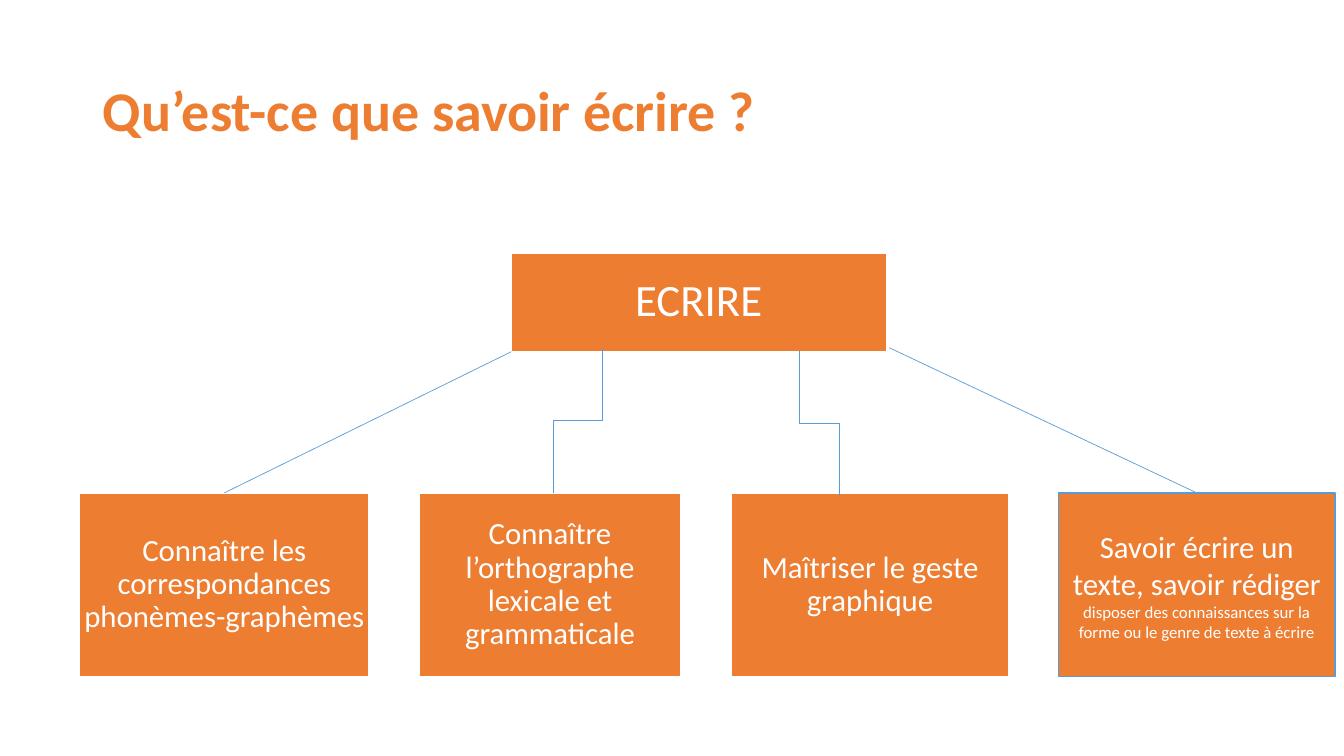
from pptx import Presentation
from pptx.dml.color import RGBColor
from pptx.enum.shapes import MSO_CONNECTOR, MSO_SHAPE
from pptx.enum.text import MSO_ANCHOR, MSO_AUTO_SIZE, PP_ALIGN
from pptx.oxml.ns import qn
from pptx.util import Inches, Pt
from lxml.etree import SubElement

COLORS = {"orange": "ED7D31", "blue": "5B9BD5", "white": "FFFFFF"}
FONT = "Calibri"
ROOT_BOX = (5.07, 2.51, 3.72, 0.98)
ROW_TOP, ROW_HEIGHT = 4.89, 1.82
SKILLS = [
    (0.79, 2.87, "Connaître les correspondances phonèmes-graphèmes"),
    (4.16, 2.59, "Connaître l’orthographe lexicale et grammaticale"),
    (7.25, 2.76, "Maîtriser le geste graphique"),
]
WRITING_BOX = (10.5, ROW_TOP, 2.74, ROW_HEIGHT)
WRITING_LINES = [
    ("Savoir écrire un texte, savoir rédiger", 22),
    ("disposer des connaissances sur la forme ou le genre de texte à écrire", 12),
]


def color(name):
    """Return the named palette colour."""
    return RGBColor.from_string(COLORS[name])


def style_paragraph(paragraph, size, color_name, spacing, align, bold=False):
    """Format a whole paragraph."""
    paragraph.alignment = align
    paragraph.line_spacing = spacing
    paragraph.font.name = FONT
    paragraph.font.size = Pt(size)
    paragraph.font.bold = bold
    paragraph.font.color.rgb = color(color_name)


def add_title(slide, box, text):
    """Place and format the slide title in the given box."""
    title = slide.shapes.title
    title.left, title.top, title.width, title.height = map(Inches, box)
    frame = title.text_frame
    frame.text = text
    frame.auto_size = MSO_AUTO_SIZE.NONE
    frame.vertical_anchor = MSO_ANCHOR.MIDDLE
    style_paragraph(frame.paragraphs[0], 40, "orange", 0.9, PP_ALIGN.LEFT, bold=True)


def add_box(slide, box, lines, border="white", spacing=0.9, margins=(0.02, 0.02)):
    """Add an orange box holding centred (text, size) lines."""
    shape = slide.shapes.add_shape(MSO_SHAPE.RECTANGLE, *map(Inches, box))
    shape.shadow.inherit = False
    shape.fill.solid()
    shape.fill.fore_color.rgb = color("orange")
    shape.line.color.rgb = color(border)
    shape.line.width = Pt(1)
    frame = shape.text_frame
    frame.word_wrap = True
    frame.vertical_anchor = MSO_ANCHOR.MIDDLE
    frame.margin_left = frame.margin_right = Inches(margins[0])
    frame.margin_top = frame.margin_bottom = Inches(margins[1])
    for index, (text, size) in enumerate(lines):
        paragraph = frame.add_paragraph() if index else frame.paragraphs[0]
        paragraph.text = text
        style_paragraph(paragraph, size, "white", spacing, PP_ALIGN.CENTER)
    return shape


def add_line(slide, kind, start, end):
    """Add a thin blue connector between two points."""
    connector = slide.shapes.add_connector(kind, *map(Inches, (*start, *end)))
    connector.line.color.rgb = color("blue")
    connector.line.width = Pt(0.5)
    SubElement(connector._element.spPr, qn("a:effectLst"))
    return connector


def add_vertical_elbow(slide, start, end):
    """Add an elbow that leaves and arrives vertically."""
    middle_x, middle_y = (start[0] + end[0]) / 2, (start[1] + end[1]) / 2
    shift, drop = end[0] - start[0], end[1] - start[1]
    side = 1 if shift > 0 else -1
    top = middle_y - abs(shift) / 2
    elbow = add_line(slide, MSO_CONNECTOR.ELBOW,
                     (middle_x + side * drop / 2, top),
                     (middle_x - side * drop / 2, top + abs(shift)))
    rotation = 270 if shift > 0 else 90
    elbow._element.spPr.find(qn("a:xfrm")).set("rot", str(rotation * 60000))


def add_diagram(slide):
    """Draw the root box, its four skills and the links between them."""
    left, top, width, height = ROOT_BOX
    bottom = top + height
    add_box(slide, ROOT_BOX, [("ECRIRE", 32)])
    skills = [add_box(slide, (x, ROW_TOP, skill_width, ROW_HEIGHT), [(text, 22)])
              for x, skill_width, text in SKILLS]
    add_vertical_elbow(slide, (5.97, 3.45), (5.49, ROW_TOP))
    add_vertical_elbow(slide, (7.93, 3.48), (8.33, 4.92))
    writing = add_box(slide, WRITING_BOX, WRITING_LINES, "blue", 1.0, (0.1, 0.05))
    for start, target in [((left + width + 0.03, bottom - 0.04), writing),
                          ((left, bottom), skills[0])]:
        line = add_line(slide, MSO_CONNECTOR.STRAIGHT, start, start)
        line.end_connect(target, 0)


def main():
    """Build and save the presentation."""
    presentation = Presentation()
    presentation.slide_width = Inches(13.33)
    presentation.slide_height = Inches(7.5)
    slide = presentation.slides.add_slide(presentation.slide_layouts[5])
    add_title(slide, (0.92, 0.4, 11.5, 1.45), "Qu’est-ce que savoir écrire ?")
    add_diagram(slide)
    presentation.save("out.pptx")


if __name__ == "__main__":
    main()
